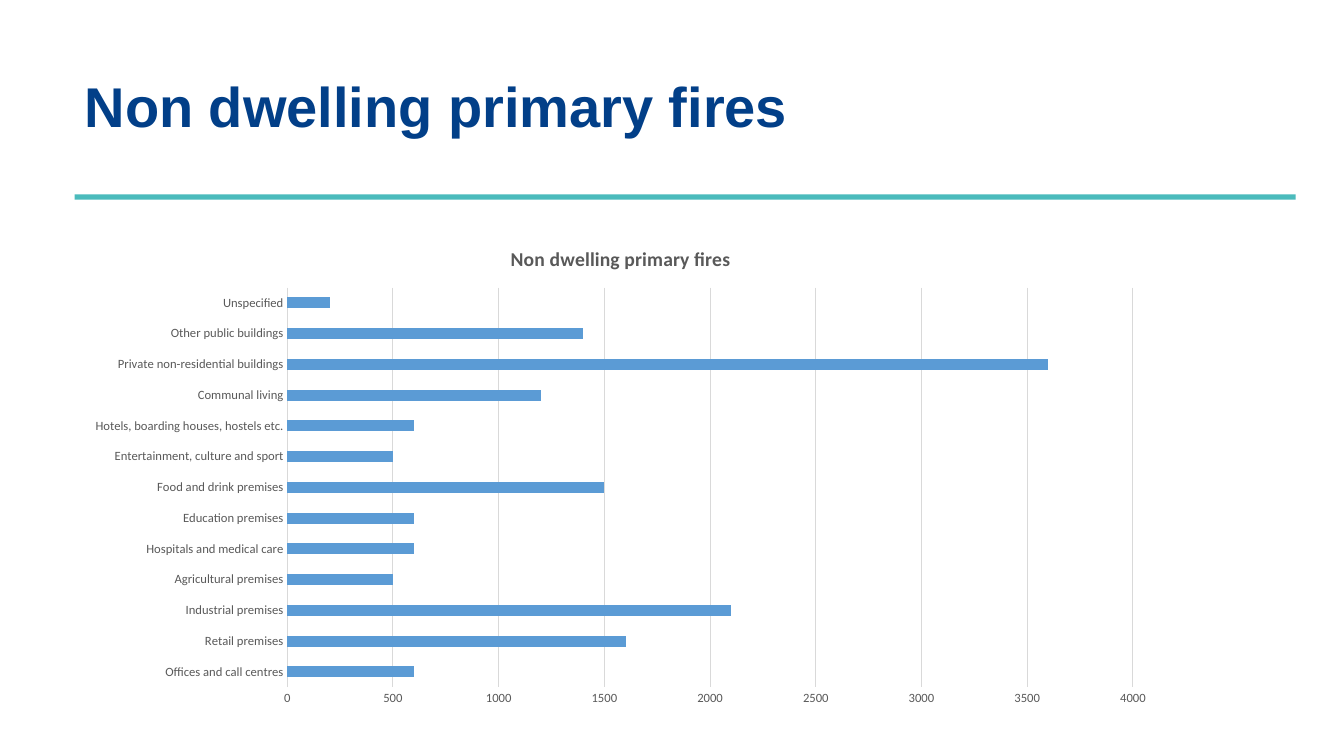
import dataclasses

import pptx
import pptx.chart.axis
import pptx.chart.data
import pptx.dml.color
import pptx.enum.chart
import pptx.enum.shapes
import pptx.enum.text
import pptx.util

SLIDE_WIDTH = pptx.util.Inches(13.33)
SLIDE_HEIGHT = pptx.util.Inches(7.5)
HEADING = "Non dwelling primary fires"
GREY = "595959"
RULE_GREY = "D9D9D9"


@dataclasses.dataclass(frozen=True)
class Area:
    """A rectangle given in percent of the slide's width and height."""
    left: float
    top: float
    width: float
    height: float

    def box(self) -> tuple[int, int, int, int]:
        """Return left, top, width and height in slide units."""
        return (int(SLIDE_WIDTH * self.left / 100), int(SLIDE_HEIGHT * self.top / 100),
                int(SLIDE_WIDTH * self.width / 100), int(SLIDE_HEIGHT * self.height / 100))


@dataclasses.dataclass(frozen=True)
class Premises:
    """A kind of building and its number of fires."""
    kind: str
    fires: int


HEADING_AREA = Area(5.55, 8.8, 68.57, 10.27)
DIVIDER_AREA = Area(5.55, 25.73, 90.85, 0.67)
FIRES_AREA = Area(5.48, 30, 81.4, 64.67)

PREMISES = [
    Premises("Offices and call centres", 600),
    Premises("Retail premises", 1600),
    Premises("Industrial premises", 2100),
    Premises("Agricultural premises", 500),
    Premises("Hospitals and medical care", 600),
    Premises("Education premises", 600),
    Premises("Food and drink premises", 1500),
    Premises("Entertainment, culture and sport", 500),
    Premises("Hotels, boarding houses, hostels etc.", 600),
    Premises("Communal living", 1200),
    Premises("Private non-residential buildings", 3600),
    Premises("Other public buildings", 1400),
    Premises("Unspecified", 200),
]


def colour(value: str) -> pptx.dml.color.RGBColor:
    """Turn a hex string into a colour."""
    return pptx.dml.color.RGBColor.from_string(value)


def set_font(font, size: float, hex_colour: str, face: str, bold: bool = False) -> None:
    """Give a font its size, colour, face and weight."""
    font.size = pptx.util.Pt(size)
    font.color.rgb = colour(hex_colour)
    font.name = face
    font.bold = bold


def set_line(line, hex_colour: str) -> None:
    """Draw a thin line in one colour."""
    line.color.rgb = colour(hex_colour)
    line.width = pptx.util.Pt(0.75)


def add_heading(slide) -> None:
    """Place and format the slide's title."""
    heading = slide.shapes.title
    heading.left, heading.top, heading.width, heading.height = HEADING_AREA.box()
    frame = heading.text_frame
    frame.text = HEADING
    frame.word_wrap = True
    frame.auto_size = pptx.enum.text.MSO_AUTO_SIZE.NONE
    frame.vertical_anchor = pptx.enum.text.MSO_ANCHOR.MIDDLE
    frame.paragraphs[0].alignment = pptx.enum.text.PP_ALIGN.LEFT
    set_font(frame.paragraphs[0].font, 40, "023F88", "Arial", bold=True)


def add_divider(slide) -> None:
    """Draw the coloured bar below the title."""
    divider = slide.shapes.add_shape(pptx.enum.shapes.MSO_SHAPE.RECTANGLE, *DIVIDER_AREA.box())
    divider.shadow.inherit = False
    divider.fill.solid()
    divider.fill.fore_color.rgb = colour("4BBBBC")
    divider.line.fill.background()


def style_axis(axis) -> None:
    """Give an axis small grey labels and no tick marks."""
    axis.major_tick_mark = pptx.enum.chart.XL_TICK_MARK.NONE
    axis.minor_tick_mark = pptx.enum.chart.XL_TICK_MARK.NONE
    set_font(axis.tick_labels.font, 9, GREY, "Calibri")


def add_fires_chart(slide) -> None:
    """Chart the number of fires for each kind of premises."""
    fires = pptx.chart.data.CategoryChartData(number_format="General")
    fires.categories = [premises.kind for premises in PREMISES]
    fires.add_series("Series 1", [premises.fires for premises in PREMISES])
    chart = slide.shapes.add_chart(
        pptx.enum.chart.XL_CHART_TYPE.BAR_CLUSTERED, *FIRES_AREA.box(), fires).chart
    set_font(chart.font, 10, "000000", "Calibri")
    chart.has_legend = False
    chart.has_title = True
    chart.chart_title.include_in_layout = False
    caption = chart.chart_title.text_frame
    caption.text = HEADING
    set_font(caption.paragraphs[0].font, 14, GREY, "Calibri", bold=True)

    style_axis(chart.category_axis)
    set_line(chart.category_axis.format.line, RULE_GREY)
    scale = chart.value_axis
    style_axis(scale)
    scale.minimum_scale, scale.maximum_scale, scale.major_unit = 0, 4000, 500
    scale.format.line.fill.background()
    scale.has_major_gridlines = True
    set_line(scale.major_gridlines.format.line, RULE_GREY)

    bars = chart.plots[0]
    bars.gap_width = 182
    bars.vary_by_categories = False
    bars.series[0].format.fill.solid()
    bars.series[0].format.fill.fore_color.rgb = colour("5B9BD5")


def main() -> None:
    """Build the slide and save it."""
    deck = pptx.Presentation()
    deck.slide_width, deck.slide_height = SLIDE_WIDTH, SLIDE_HEIGHT
    slide = deck.slides.add_slide(deck.slide_layouts.get_by_name("Title Only"))
    add_divider(slide)
    add_fires_chart(slide)
    add_heading(slide)
    deck.save("out.pptx")


if __name__ == "__main__":
    main()
